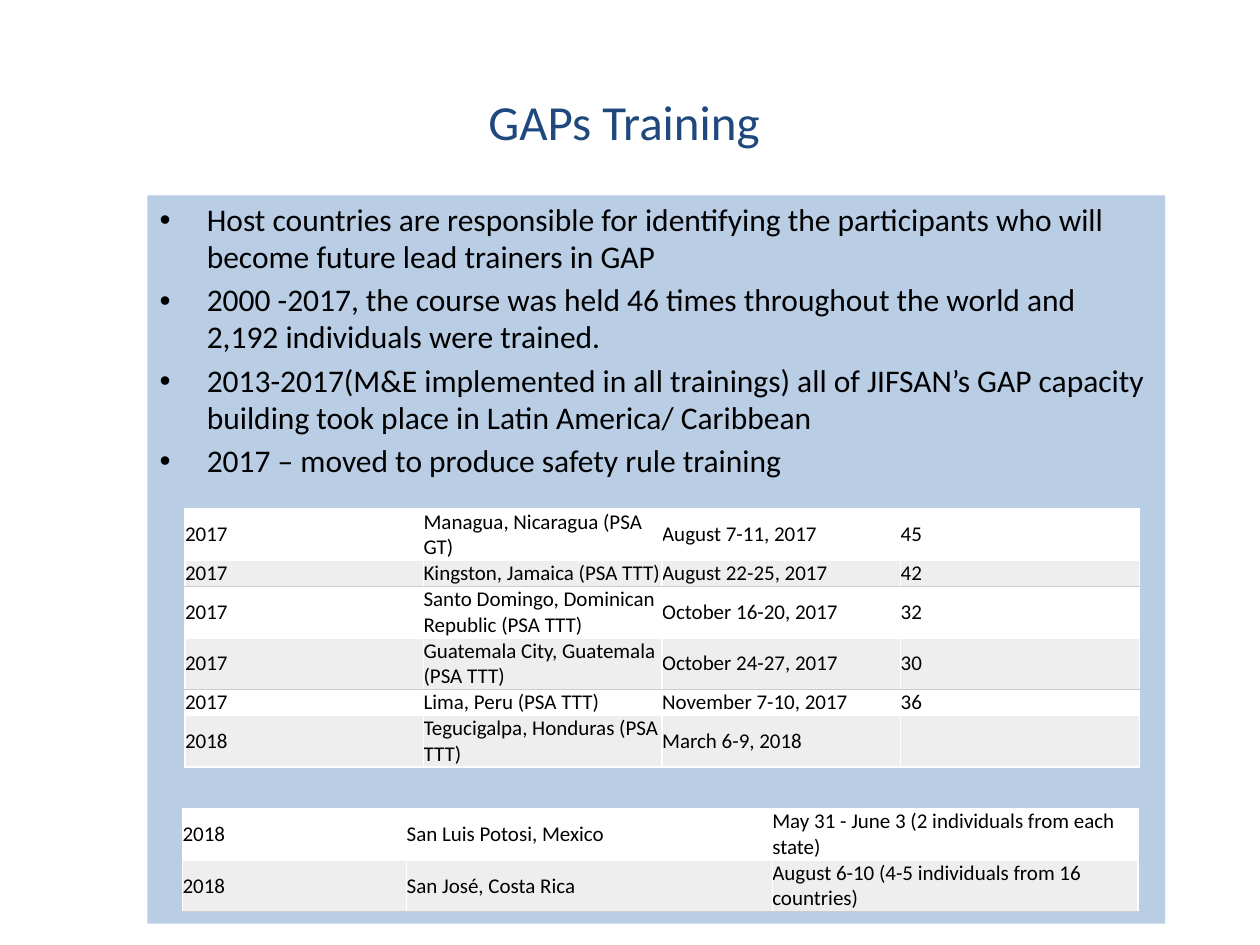
from lxml import etree
from pptx import Presentation
from pptx import util as u
from pptx.dml.color import RGBColor
from pptx.enum import shapes, text
from pptx.oxml.ns import qn

COLORS = {
    "title": "1F497D",
    "panel": "B9CDE5",
    "ink": "000000",
    "rule": "CCCCCC",
    "odd": "FFFFFF",
    "even": "EEEEEE",
}
LINE_HEIGHT = 0.52  # one table line, in cm

HELD_COURSES = [
    ("2017", "Managua, Nicaragua (PSA GT)", "August 7-11, 2017", "45"),
    ("2017", "Kingston, Jamaica (PSA TTT)", "August 22-25, 2017", "42"),
    ("2017", "Santo Domingo, Dominican Republic (PSA TTT)", "October 16-20, 2017", "32"),
    ("2017", "Guatemala City, Guatemala (PSA TTT)", "October 24-27, 2017", "30"),
    ("2017", "Lima, Peru (PSA TTT)", "November 7-10, 2017", "36"),
    ("2018", "Tegucigalpa, Honduras (PSA TTT)", "March 6-9, 2018", ""),
]
PLANNED_COURSES = [
    ("2018", "San Luis Potosi, Mexico", "May 31 - June 3 (2 individuals from each state)"),
    ("2018", "San José, Costa Rica", "August 6-10 (4-5 individuals from 16 countries)"),
]
POINTS = [
    "Host countries are responsible for identifying the participants who will "
    "become future lead trainers in GAP",
    "2000 -2017, the course was held 46 times throughout the world and "
    "2,192 individuals were trained.",
    "2013-2017(M&E implemented in all trainings) all of JIFSAN’s GAP capacity "
    "building took place in Latin America/ Caribbean",
    "2017 – moved to produce safety rule training",
]


def rgb(name):
    return RGBColor.from_string(COLORS[name])


class SlideBuilder:
    font = "Calibri"

    def __init__(self, slide):
        self.slide = slide

    def run(self, paragraph, words, size, color="ink"):
        run = paragraph.add_run()
        run.text = words
        run.font.name = self.font
        run.font.size = u.Pt(size)
        run.font.color.rgb = rgb(color)

    def title(self, words, left, top, width, height):
        heading = self.slide.shapes.add_textbox(*map(u.Cm, (left, top, width, height)))
        frame = heading.text_frame
        frame.word_wrap = True
        frame.vertical_anchor = text.MSO_ANCHOR.MIDDLE
        frame.paragraphs[0].alignment = text.PP_ALIGN.CENTER
        self.run(frame.paragraphs[0], words, 28, "title")

    def bullet_panel(self, points, left, top, width, height):
        panel = self.slide.shapes.add_shape(
            shapes.MSO_SHAPE.RECTANGLE, *map(u.Cm, (left, top, width, height)))
        panel.shadow.inherit = False
        panel.fill.solid()
        panel.fill.fore_color.rgb = rgb("panel")
        panel.line.fill.background()
        frame = panel.text_frame
        frame.word_wrap = True
        frame.vertical_anchor = text.MSO_ANCHOR.TOP
        for index, point in enumerate(points):
            paragraph = frame.add_paragraph() if index else frame.paragraphs[0]
            paragraph.alignment = text.PP_ALIGN.LEFT
            paragraph.line_spacing = 0.98
            if index:
                paragraph.space_before = u.Pt(3.6)
            properties = paragraph._p.get_or_add_pPr()
            indent = u.Cm(0.95)
            properties.set("marL", str(indent))
            properties.set("indent", str(-indent))
            etree.SubElement(properties, qn("a:buFont"), typeface="Arial")
            etree.SubElement(properties, qn("a:buChar"), char="•")
            self.run(paragraph, point, 18)

    def rule_below(self, cell, edge):
        """Draw a thin line on one edge of a cell: "a:lnT" or "a:lnB"."""
        properties = cell._tc.get_or_add_tcPr()
        line = etree.Element(qn(edge), w=str(u.Pt(0.75)))
        fill = etree.SubElement(line, qn("a:solidFill"))
        etree.SubElement(fill, qn("a:srgbClr"), val=COLORS["rule"])
        properties.insert(0, line)

    def course_table(self, courses, left, top, widths, line_counts, ruled_rows):
        """Striped table; ruled_rows are the rows with a line under them."""
        heights = [LINE_HEIGHT * count for count in line_counts]
        frame = self.slide.shapes.add_table(
            len(courses), len(widths),
            *map(u.Cm, (left, top, sum(widths), sum(heights))))
        table = frame.table
        table.first_row = table.horz_banding = False
        for column, width in zip(table.columns, widths):
            column.width = u.Cm(width)
        for row, height in zip(table.rows, heights):
            row.height = u.Cm(height)
        for r, course in enumerate(courses):
            for c, words in enumerate(course):
                cell = table.cell(r, c)
                cell.margin_left = cell.margin_right = 0
                cell.margin_top = cell.margin_bottom = 0
                cell.vertical_anchor = text.MSO_ANCHOR.MIDDLE
                cell.fill.solid()
                cell.fill.fore_color.rgb = rgb("even" if r % 2 else "odd")
                if r in ruled_rows:
                    self.rule_below(cell, "a:lnB")
                if r - 1 in ruled_rows:
                    self.rule_below(cell, "a:lnT")
                if words:
                    self.run(cell.text_frame.paragraphs[0], words, 12)
                else:
                    cell.text_frame.paragraphs[0].font.size = u.Pt(12)


def main():
    deck = Presentation()
    deck.slide_width, deck.slide_height = u.Cm(25.4), u.Cm(19.05)
    builder = SlideBuilder(deck.slides.add_slide(deck.slide_layouts[6]))
    builder.title("GAPs Training", 1.15, 0.85, 22.86, 3.18)
    builder.bullet_panel(POINTS, 2.97, 3.94, 20.52, 14.68)
    builder.course_table(HELD_COURSES, 3.73, 10.26, [4.81] * 4,
                         [2, 1, 2, 2, 1, 2], {1, 3})
    builder.course_table(PLANNED_COURSES, 3.68, 16.3, [4.52, 7.37, 7.37],
                         [2, 2], {1})
    deck.save("out.pptx")


if __name__ == "__main__":
    main()
